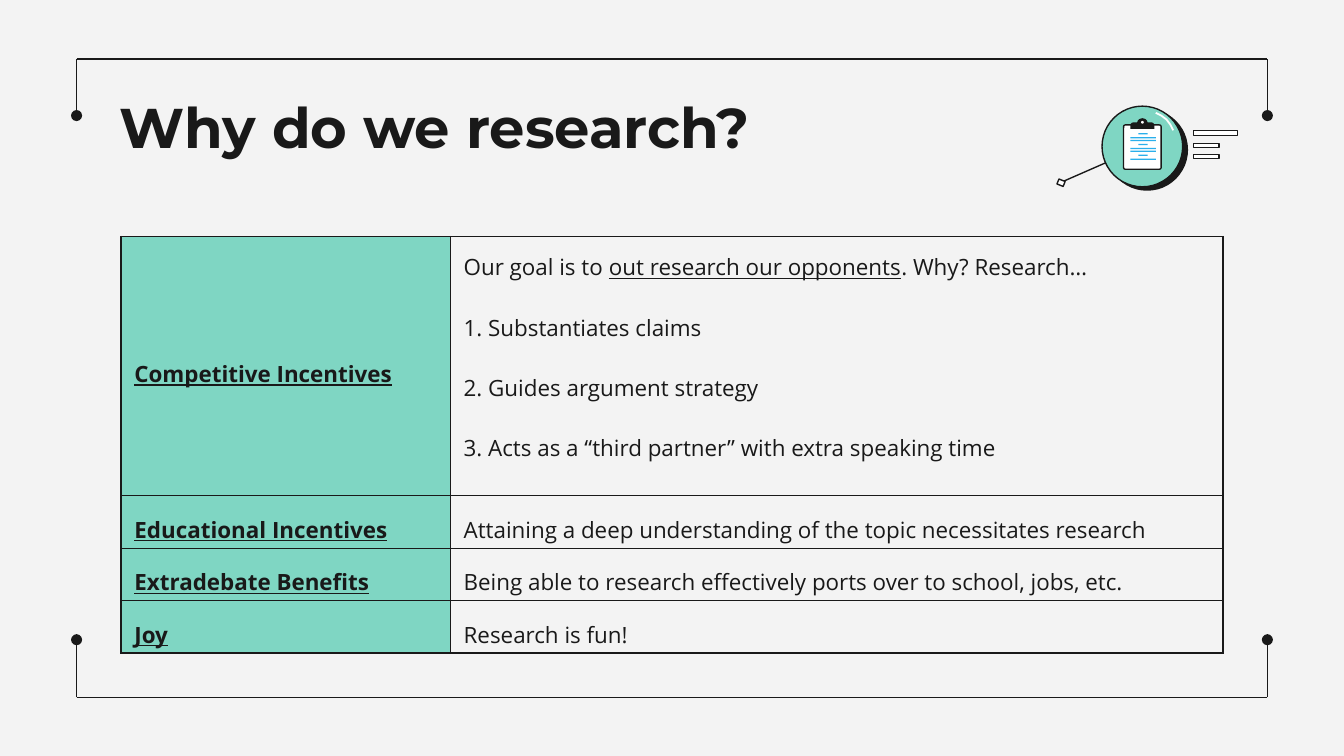
import pptx
import pptx.util
import pptx.dml.color
import pptx.enum.shapes
import pptx.enum.text
import pptx.oxml
import pptx.oxml.ns
from pptx.util import Inches, Pt

INK, TEAL, WHITE, BLUE, PAPER = "191919", "7FD6C3", "FFFFFF", "2AAFEB", "F3F3F3"
KIND = pptx.enum.shapes.MSO_SHAPE
ANCHOR = pptx.enum.text.MSO_ANCHOR
ALIGN = pptx.enum.text.PP_ALIGN
NS = pptx.oxml.ns.nsdecls("a")
hue = pptx.dml.color.RGBColor.from_string

# Widescreen slide, 16 to 9
prs = pptx.Presentation()
prs.slide_width = Inches(10)
prs.slide_height = prs.slide_width * 9 // 16
slide = prs.slides.add_slide(prs.slide_layouts[5])
slide.background.fill.solid()
slide.background.fill.fore_color.rgb = hue(PAPER)


def draw(kind, x, y, w, h, fill, edge=None):
    part = slide.shapes.add_shape(kind, Inches(x), Inches(y), Inches(w), Inches(h))
    part.shadow.inherit = False
    part.fill.solid()
    part.fill.fore_color.rgb = hue(fill)
    if edge:
        part.line.color.rgb = hue(edge)
        part.line.width = Pt(0.75)
    else:
        part.line.fill.background()
    return part


def link(x1, y1, x2, y2, dot=False):
    line = slide.shapes.add_connector(
        pptx.enum.shapes.MSO_CONNECTOR.STRAIGHT,
        Inches(x1), Inches(y1), Inches(x2), Inches(y2))
    line.line.color.rgb = hue(INK)
    line.line.width = Pt(0.75)
    if dot:
        line.line._get_or_add_ln().append(
            pptx.oxml.parse_xml(f'<a:tailEnd {NS} type="oval" w="med" len="med"/>'))
    line._element.spPr.append(pptx.oxml.parse_xml(f"<a:effectLst {NS}/>"))


# Frame: top and bottom brackets with dotted ends
for edge, tip in ((0.44, 0.86), (5.19, 4.76)):
    link(0.57, edge, 9.43, edge)
    for x in (0.57, 9.43):
        link(x, edge, x, tip, dot=True)

# Title
title = slide.shapes.title
title.left, title.top = Inches(0.79), Inches(0.59)
title.width, title.height = Inches(8.43), Inches(0.63)
frame = title.text_frame
frame.text = "Why do we research?"
frame.auto_size = pptx.enum.text.MSO_AUTO_SIZE.NONE
frame.vertical_anchor = ANCHOR.TOP
frame.margin_left = frame.margin_right = Inches(0.1)
frame.margin_top = frame.margin_bottom = Inches(0.1)
head = frame.paragraphs[0]
head.alignment = ALIGN.LEFT
head.font.name, head.font.size, head.font.bold = "Montserrat", Pt(30), True
head.font.color.rgb = hue(INK)

# Table: each paragraph is a list of (text, underlined) runs
rows = [
    ("Competitive Incentives", [
        [("Our goal is to ", False), ("out research our opponents", True),
         (". Why? Research…", False)],
        [("1. Substantiates claims", False)],
        [("2. Guides argument strategy", False)],
        [("3. Acts as a “third partner” with extra speaking time", False)]]),
    ("Educational Incentives", [
        [("Attaining a deep understanding of the topic necessitates research", False)]]),
    ("Extradebate Benefits", [
        [("Being able to research effectively ports over to school, jobs, etc.", False)]]),
    ("Joy", [[("Research is fun!", False)]]),
]
table = slide.shapes.add_table(
    len(rows), 2, Inches(0.9), Inches(1.76), Inches(8.2), Inches(3.1)).table
table.first_row = table.horz_banding = False
for col, width in zip(table.columns, (2.45, 5.75)):
    col.width = Inches(width)

for r, (label, body) in enumerate(rows):
    table.rows[r].height = Inches(0.39 if r else 1.93)
    for c, paras in enumerate(([[(label, True)]], body)):
        cell = table.cell(r, c)
        cell.margin_left = cell.margin_right = Inches(0.1)
        cell.margin_top = cell.margin_bottom = 0
        cell.vertical_anchor = ANCHOR.TOP if len(paras) > 1 else ANCHOR.MIDDLE
        for side in "LRTB":
            cell._tc.get_or_add_tcPr().append(pptx.oxml.parse_xml(
                f'<a:ln{side} {NS} w="9525"><a:solidFill><a:srgbClr val="{INK}"/>'
                f"</a:solidFill></a:ln{side}>"))
        if c == 0:
            cell.fill.solid()
            cell.fill.fore_color.rgb = hue(TEAL)
        else:
            cell.fill.background()
        for i, runs in enumerate(paras):
            para = cell.text_frame.paragraphs[0] if i == 0 else cell.text_frame.add_paragraph()
            para.font.name, para.font.size = "Open Sans", Pt(12)
            para.font.bold = c == 0
            para.font.color.rgb = hue(INK)
            if i == 0:
                para.line_spacing = 1.5
            if c == 1:
                para.space_after = Pt(16)
            if len(paras) > 1:
                para.alignment = ALIGN.JUSTIFY
            for text, under in runs:
                run = para.add_run()
                run.text = text
                run.font.underline = under

# Icon: bars beside the lens
for y, w, h in ((0.97, 0.33, 0.04), (1.07, 0.19, 0.03), (1.15, 0.19, 0.03)):
    draw(KIND.RECTANGLE, 8.88, y, w, h, WHITE, INK)

# Icon: handle with its square tip
link(8.23, 1.21, 7.91, 1.35)
draw(KIND.RECTANGLE, 7.87, 1.34, 0.05, 0.04, WHITE, INK).rotation = 22

# Icon: lens, shadow and shine
draw(KIND.OVAL, 8.23, 0.81, 0.61, 0.61, INK)
draw(KIND.OVAL, 8.2, 0.79, 0.6, 0.6, TEAL, INK)
path = slide.shapes.build_freeform(Inches(8.6), Inches(0.84), scale=1.0)
path.add_line_segments(
    [(Inches(x), Inches(y)) for x, y in ((8.64, 0.86), (8.68, 0.89), (8.71, 0.93), (8.73, 0.97))],
    close=False)
shine = path.convert_to_shape()
shine.shadow.inherit = False
shine.fill.background()
shine.line.color.rgb = hue(WHITE)
shine.line.width = Pt(1)

# Icon: clipboard with its clip
board = draw(KIND.ROUNDED_RECTANGLE, 8.36, 0.93, 0.28, 0.33, WHITE, INK)
board.adjustments[0] = 0.05
clip = draw(KIND.ROUND_2_SAME_RECTANGLE, 8.41, 0.91, 0.18, 0.05, INK)
clip.adjustments[0] = 0.5
draw(KIND.OVAL, 8.46, 0.88, 0.08, 0.07, INK)
draw(KIND.OVAL, 8.49, 0.9, 0.02, 0.02, WHITE)

# Icon: writing on the clipboard, short and long lines
for x, w, tops in ((8.47, 0.07, (0.99, 1.07, 1.15)),
                   (8.41, 0.19, (1.02, 1.04, 1.1, 1.12, 1.18))):
    for y in tops:
        draw(KIND.RECTANGLE, x, y, w, 0.01, BLUE)

prs.save("out.pptx")
